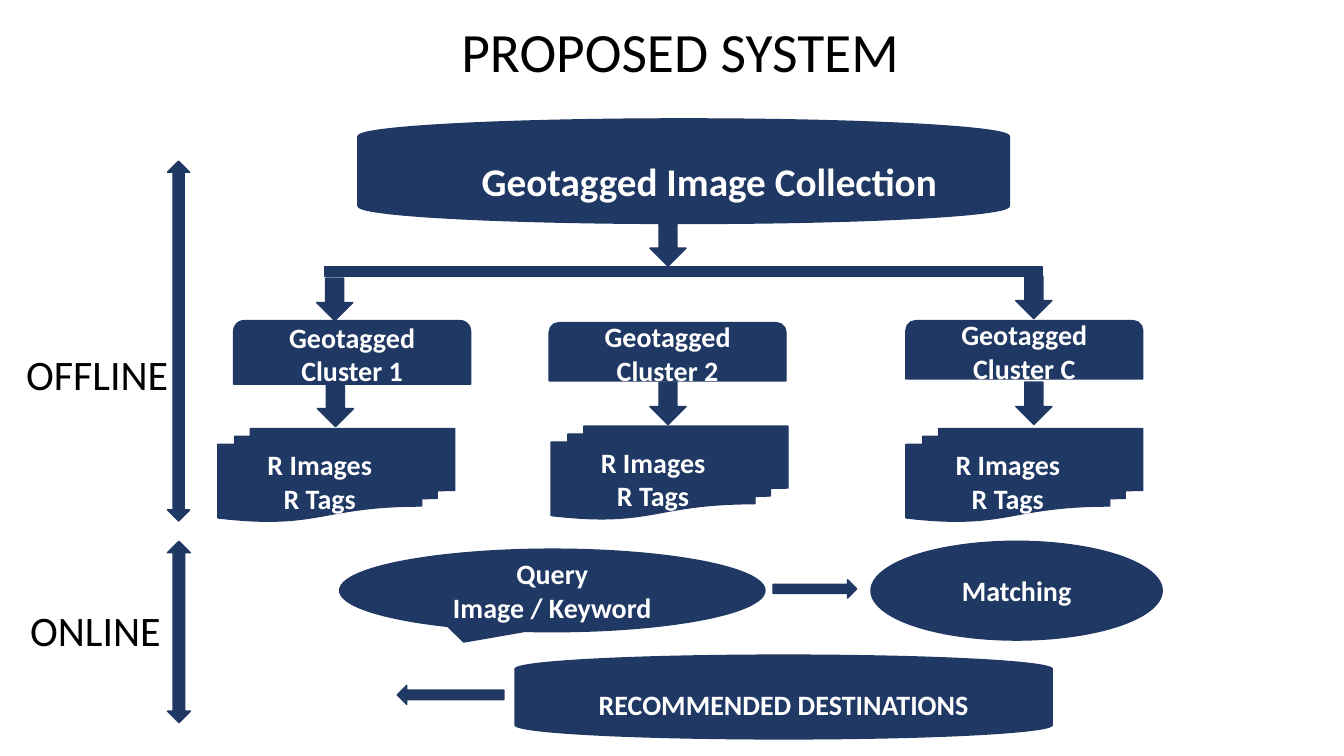
from pptx import Presentation
from pptx.dml.color import RGBColor
from pptx.enum.shapes import MSO_SHAPE as Preset
from pptx.enum.text import MSO_ANCHOR as Anchor, PP_ALIGN as Align
from pptx.util import Cm, Pt

COLORS = {"navy": "203864", "white": "FFFFFF", "black": "000000"}
FONT = "Calibri"
COLUMN_WIDTH = 5.97


def color(name):
    return RGBColor.from_string(COLORS[name])


def write(frame, text, size, ink, bold=False, align=Align.CENTER):
    frame.text = text
    for paragraph in frame.paragraphs:
        paragraph.alignment = align
        for run in paragraph.runs:
            run.font.name = FONT
            run.font.size = Pt(size)
            run.font.bold = bold
            run.font.color.rgb = color(ink)


def add_block(slide, preset, box, offset, size, text="", line=1):
    left, top = box[0] + offset[0], box[1] + offset[1]
    block = slide.shapes.add_shape(preset, Cm(left), Cm(top), Cm(size[0]), Cm(size[1]))
    block.shadow.inherit = False
    block.fill.solid()
    block.fill.fore_color.rgb = color("navy")
    block.line.color.rgb = color("navy")
    block.line.width = Pt(line)
    if text:
        block.text_frame.vertical_anchor = Anchor.MIDDLE
        write(block.text_frame, text, 20, "white", bold=True)
    return block


def add_label(slide, box, offset, size, text, points, align=Align.LEFT):
    left, top = box[0] + offset[0], box[1] + offset[1]
    label = slide.shapes.add_textbox(Cm(left), Cm(top), Cm(size[0]), Cm(size[1]))
    label.text_frame.word_wrap = True
    write(label.text_frame, text, points, "black", align=align)
    return label


def add_title(slide, box):
    title = add_label(slide, box, (0, 0), box[2:], "PROPOSED SYSTEM", 39.6, Align.CENTER)
    title.text_frame.vertical_anchor = Anchor.MIDDLE
    title.text_frame.paragraphs[0].line_spacing = 0.9


def add_down_arrow(slide, box, offset):
    add_block(slide, Preset.DOWN_ARROW, box, offset, (0.91, 1.07))


def add_cluster(slide, box, name, documents, arrow):
    add_block(slide, Preset.ROUND_2_SAME_RECTANGLE, box, (0, 0), box[2:],
              f"Geotagged Cluster {name}")
    add_block(slide, Preset.FLOWCHART_MULTIDOCUMENT, box, documents,
              (COLUMN_WIDTH, 2.34), "R Images\nR Tags")
    add_down_arrow(slide, box, arrow)


def add_offline(slide, box):
    left, top = box
    clusters = [
        ("1", 5.89, 5.08, 1.6, (-0.4, 2.72), (2.11, 1.6)),
        ("2", 13.84, 5.13, 1.47, (0.05, 2.61), (2.54, 1.5)),
        ("C", 22.83, 5.08, 1.47, (0, 2.72), (2.77, 1.55)),
    ]
    for name, x, y, height, documents, arrow in clusters:
        add_cluster(slide, (left + x, top + y, COLUMN_WIDTH, height),
                    name, documents, arrow)

    add_block(slide, Preset.RECTANGLE, box, (8.18, 3.71), (18.08, 0.25))
    for offset in [(16.38, 2.64), (7.98, 4.01), (25.6, 3.96)]:
        add_down_arrow(slide, box, offset)

    add_label(slide, box, (0.41, 5.66), (4.22, 1.55), "OFFLINE", 30)
    add_block(slide, Preset.UP_DOWN_ARROW, box, (4.22, 1.06), (0.56, 9.07))

    add_block(slide, Preset.FLOWCHART_MAGNETIC_DISK, box, (9.04, 0.02),
              (16.38, 2.59), line=2.25)
    collection = add_block(slide, Preset.RECTANGLE, box, (11.89, 0.84),
                           (12.12, 1.45), line=0.75)
    collection.text_frame.word_wrap = False
    collection.text_frame.vertical_anchor = Anchor.TOP
    write(collection.text_frame, "Geotagged Image Collection", 28, "white",
          bold=True, align=Align.LEFT)


def add_online(slide, box):
    add_block(slide, Preset.OVAL, box, (21.95, 0.04), (7.34, 2.49), "Matching")
    add_block(slide, Preset.OVAL_CALLOUT, box, (8.56, 0.24), (10.72, 2.08),
              "Query\nImage / Keyword")
    add_block(slide, Preset.FLOWCHART_MAGNETIC_DISK, box, (12.98, 2.91),
              (13.54, 2.11), "RECOMMENDED DESTINATIONS")
    add_block(slide, Preset.RIGHT_ARROW, box, (19.48, 1.01), (2.11, 0.46))
    add_block(slide, Preset.LEFT_ARROW, box, (10.01, 3.67), (2.69, 0.48))
    add_block(slide, Preset.UP_DOWN_ARROW, box, (4.22, 0.04), (0.58, 4.57))
    add_label(slide, box, (0.51, 1.51), (4.22, 1.55), "ONLINE", 30)


def main():
    deck = Presentation()
    deck.slide_width = Cm(33.87)
    deck.slide_height = Cm(19.05)
    slide = deck.slides.add_slide(deck.slide_layouts[6])
    add_title(slide, (1.9, 0.43, 30.48, 1.9))
    add_offline(slide, (0, 3))
    add_online(slide, (0, 13.6))
    deck.save("out.pptx")


if __name__ == "__main__":
    main()
